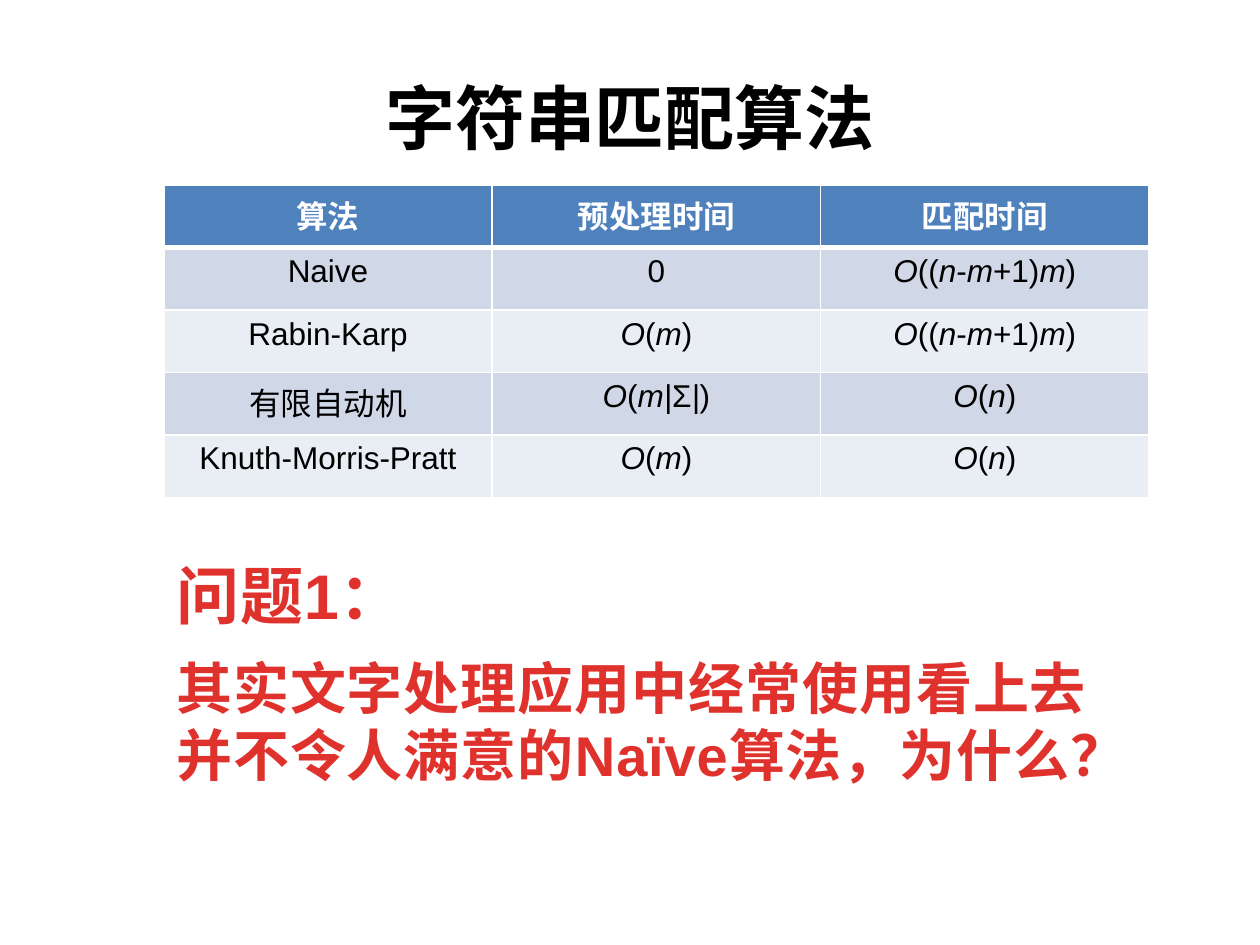
"""Build a slide comparing string matching algorithms, with a question below."""
import pptx
import pptx.dml.color
import pptx.enum.text
import pptx.oxml
import pptx.oxml.ns
import pptx.util

Inches = pptx.util.Inches
Pt = pptx.util.Pt
RGBColor = pptx.dml.color.RGBColor
PP_ALIGN = pptx.enum.text.PP_ALIGN
MSO_ANCHOR = pptx.enum.text.MSO_ANCHOR

BLACK = RGBColor(0x00, 0x00, 0x00)
WHITE = RGBColor(0xFF, 0xFF, 0xFF)
HEADER_BLUE = RGBColor(0x4F, 0x81, 0xBD)
BAND_DARK = RGBColor(0xD0, 0xD8, 0xE8)
BAND_LIGHT = RGBColor(0xE9, 0xED, 0xF4)
QUESTION_RED = RGBColor(0xE0, 0x32, 0x2D)


def write(paragraph, text, *, size, color=BLACK, bold=False, font="Arial",
          align=PP_ALIGN.CENTER, spacing=None):
    """Write text into a paragraph; parts between asterisks are italic."""
    paragraph.alignment = align
    for index, part in enumerate(text.split("*")):
        if not part:
            continue
        run = paragraph.add_run()
        run.text = part
        run.font.name = font
        run.font.size = Pt(size)
        run.font.bold = bold
        run.font.italic = index % 2 == 1
        run.font.color.rgb = color
        if spacing:
            run.font._element.set("spc", str(int(spacing * 100)))


def set_border(cell, position, side, width):
    """Give one side of a cell a white line."""
    line = pptx.oxml.parse_xml(
        f'<a:{side} {pptx.oxml.ns.nsdecls("a")} w="{Pt(width)}">'
        f'<a:solidFill><a:srgbClr val="{WHITE}"/></a:solidFill></a:{side}>')
    cell._tc.get_or_add_tcPr().insert(position, line)


presentation = pptx.Presentation()
presentation.slide_width = Inches(10)
presentation.slide_height = Inches(7.5)
slide = presentation.slides.add_slide(presentation.slide_layouts[6])

title = slide.shapes.add_textbox(Inches(0.5), Inches(0.3), Inches(9), Inches(1.25)).text_frame
title.word_wrap = True
title.vertical_anchor = MSO_ANCHOR.MIDDLE
write(title.paragraphs[0], "字符串匹配算法", size=40, bold=True, font="Arial Narrow")

ALGORITHMS = [
    ("算法", "预处理时间", "匹配时间"),
    ("Naive", "0", "*O*((*n*-*m*+1)*m*)"),
    ("Rabin-Karp", "*O*(*m*)", "*O*((*n*-*m*+1)*m*)"),
    ("有限自动机", "*O*(*m|*Σ*|*)", "*O*(*n*)"),
    ("Knuth-Morris-Pratt", "*O*(*m*)", "*O*(*n*)"),
]
comparison = slide.shapes.add_table(
    len(ALGORITHMS), 3, Inches(1.3), Inches(1.47), Inches(7.82), Inches(2.48)).table
for row, values in enumerate(ALGORITHMS):
    is_header = row == 0
    band = HEADER_BLUE if is_header else (BAND_LIGHT, BAND_DARK)[row % 2]
    widths = {"lnL": 1, "lnR": 1, "lnT": 3 if row == 1 else 1, "lnB": 3 if is_header else 1}
    for column, value in enumerate(values):
        cell = comparison.cell(row, column)
        cell.fill.solid()
        cell.fill.fore_color.rgb = band
        for position, (side, width) in enumerate(widths.items()):
            set_border(cell, position, side, width)
        write(cell.text_frame.paragraphs[0], value, size=18, bold=is_header,
              color=WHITE if is_header else BLACK)

question = slide.shapes.add_textbox(Inches(1.3), Inches(4.37), Inches(7.72), Inches(1.95)).text_frame
question.word_wrap = True
question_style = dict(color=QUESTION_RED, bold=True, align=PP_ALIGN.LEFT, spacing=0.5)
write(question.paragraphs[0], "问题1：", size=36, **question_style)
body = question.add_paragraph()
body.space_before = Pt(12)
write(body, "其实文字处理应用中经常使用看上去并不令人满意的Naïve算法，为什么？",
      size=32, **question_style)

presentation.save("out.pptx")
